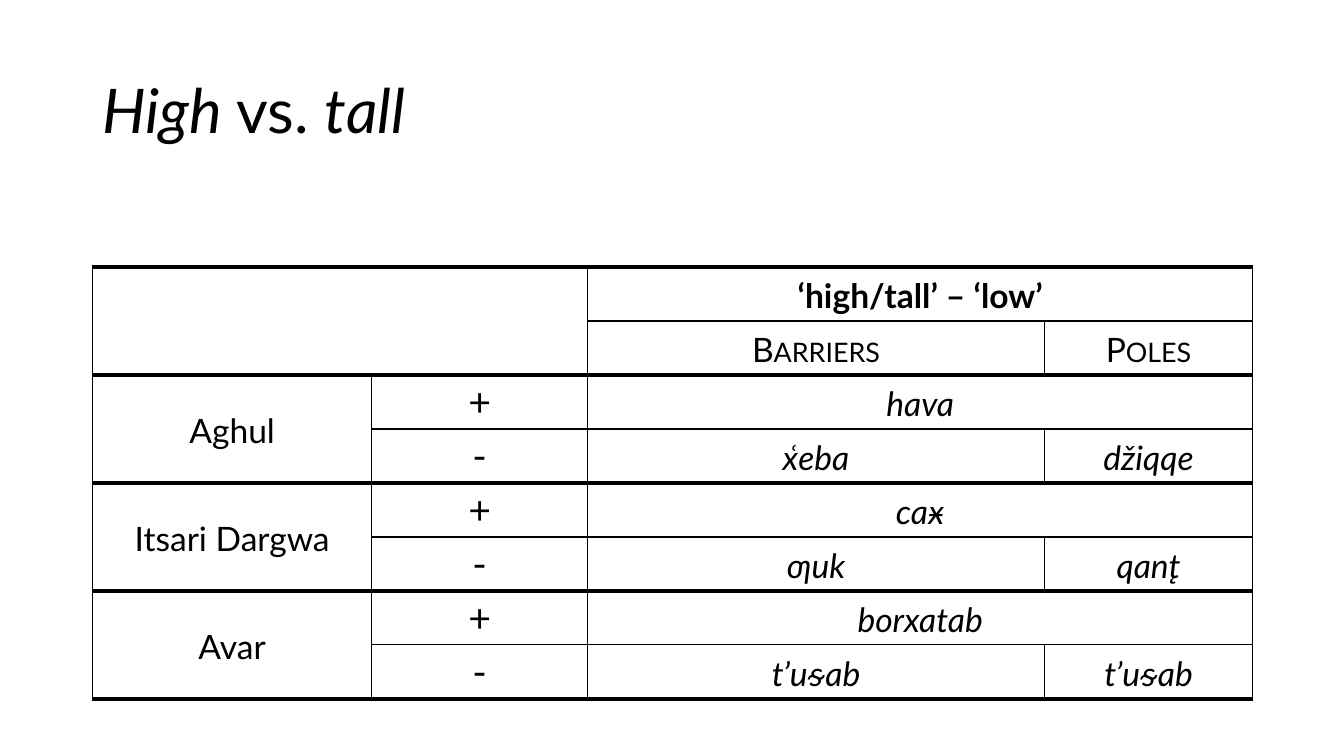
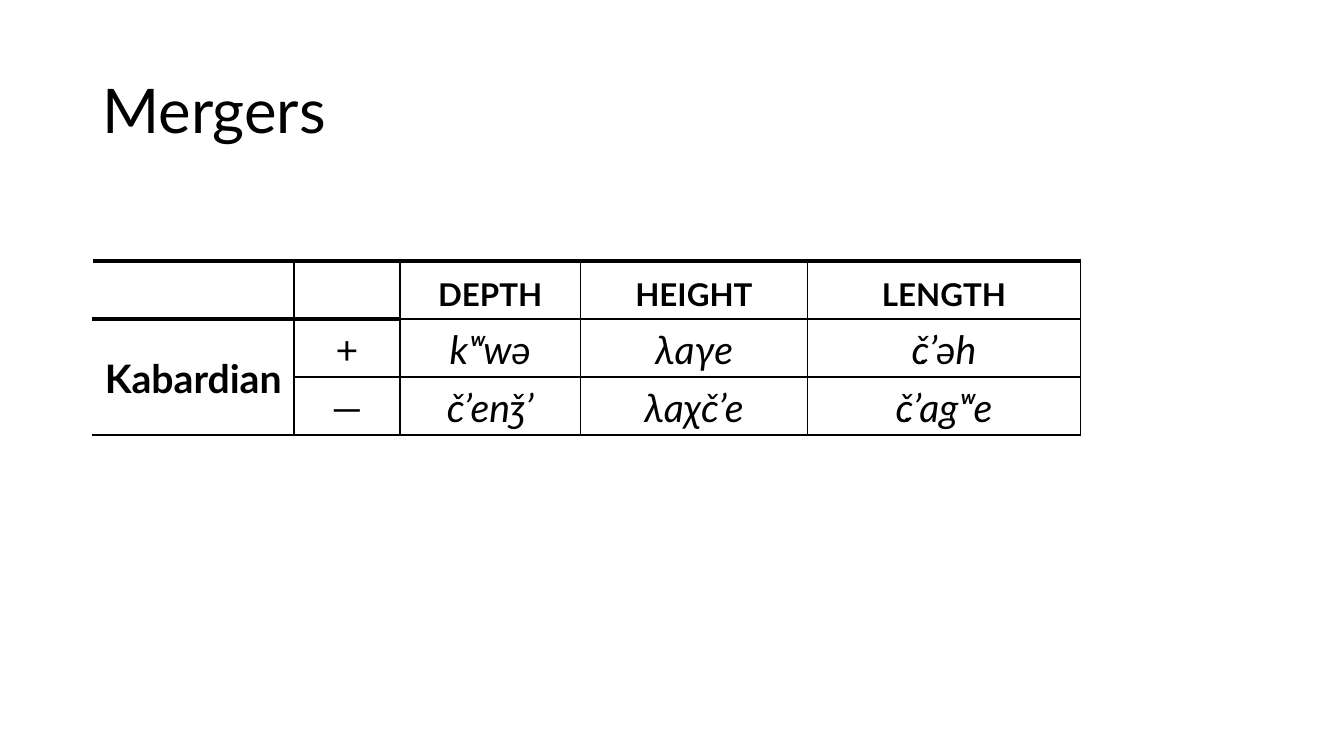
"""Build two slides with tables of dimension adjectives in Caucasian languages."""
from itertools import product

from lxml.etree import SubElement
from pptx import Presentation
from pptx.dml.color import RGBColor
from pptx.enum.text import MSO_ANCHOR as Anchor, PP_ALIGN as Align
from pptx.oxml.ns import qn
from pptx.util import Cm, Pt

COLORS = {"ink": "000000", "paper": "FFFFFF"}
FONT = "Lato"
THIN, THICK = Pt(1), Pt(3)
MARGIN, CONTENT_WIDTH = 2.33, 29.21


class Deck:
    def __init__(self):
        self.presentation = Presentation()
        self.presentation.slide_width = Cm(33.87)
        self.presentation.slide_height = Cm(19.05)
        self.slide = None

    def add_slide(self, *title_runs):
        layout = self.presentation.slide_layouts[6]
        self.slide = self.presentation.slides.add_slide(layout)
        self.title(title_runs)

    def style(self, paragraph, size, bold=False, italic=None, caps=False):
        font = paragraph.font
        font.name, font.size, font.bold, font.italic = FONT, Pt(size), bold, italic
        font.color.rgb = RGBColor.from_string(COLORS["ink"])
        if caps:
            font._element.set("cap", "small")

    def title(self, runs):
        box = self.slide.shapes.add_textbox(
            Cm(MARGIN), Cm(1.01), Cm(CONTENT_WIDTH), Cm(3.68))
        frame = box.text_frame
        frame.word_wrap = True
        frame.vertical_anchor = Anchor.MIDDLE
        paragraph = frame.paragraphs[0]
        paragraph.line_spacing = 0.9
        self.style(paragraph, 44)
        for text, italic in runs:
            run = paragraph.add_run()
            run.text, run.font.italic = text, italic

    def table(self, top, widths, row_height, rows, spans, styles, thick_edges,
              left_edge="ink"):
        frame = self.slide.shapes.add_table(
            len(rows), len(widths), Cm(MARGIN), Cm(top),
            Cm(sum(widths)), Cm(row_height * len(rows)))
        table = frame.table
        table.first_row = table.horz_banding = False
        for column, width in zip(table.columns, widths):
            column.width = Cm(width)
        for row in table.rows:
            row.height = Cm(row_height)
        for start, end in spans:
            table.cell(*start).merge(table.cell(*end))
        for row, column in product(range(len(rows)), range(len(widths))):
            cell = table.cell(row, column)
            if not cell.is_spanned:
                self.borders(table, row, column, thick_edges, left_edge)
                text, kind = rows[row][column]
                if text:
                    self.cell_text(cell, text, **styles[kind])

    def cell_text(self, cell, text, anchor=Anchor.MIDDLE, **font):
        cell.vertical_anchor = anchor
        cell.margin_left = cell.margin_right = Cm(0.18)
        cell.margin_top = cell.margin_bottom = 0
        paragraph = cell.text_frame.paragraphs[0]
        paragraph.text = text
        paragraph.alignment = Align.CENTER
        paragraph.line_spacing = 1.07
        self.style(paragraph, **font)

    def borders(self, table, top, left, thick_edges, left_edge):
        origin = table.cell(top, left)
        bottom = top + origin.span_height
        right = left + origin.span_width
        for row, column in product(range(top, bottom), range(left, right)):
            cell = table.cell(row, column)
            first = cell is origin or (row, column) == (top, left)
            sides = (
                ("a:lnL", column == left, THIN, "ink" if column else left_edge),
                ("a:lnR", first or column + 1 == right, THIN, "ink"),
                ("a:lnT", row == top, THICK if (top, column) in thick_edges else THIN, "ink"),
                ("a:lnB", first or row + 1 == bottom,
                 THICK if (bottom, column) in thick_edges else THIN, "ink"),
            )
            properties = cell._tc.get_or_add_tcPr()
            for tag, drawn, width, color in sides:
                if drawn:
                    line = SubElement(properties, qn(tag), w=str(width))
                    fill = SubElement(line, qn("a:solidFill"))
                    SubElement(fill, qn("a:srgbClr"), val=COLORS[color])
            cell.fill.background()


def high_tall_slide(deck):
    deck.add_slide(("High", True), (" vs. ", False), ("tall", True))
    languages = (
        ("Aghul", "hava", "x̜eba", "džiqqe"),
        ("Itsari Dargwa", "caӿ", "ƣuk", "qant̨"),
        ("Avar", "borxatab", "t’uᵴab", "t’uᵴab"),
    )
    empty = ("", "label")
    rows = [
        (empty, empty, ("‘high/tall’ – ‘low’", "head"), empty),
        (empty, empty, ("Barriers", "caps"), ("Poles", "caps")),
    ]
    spans = [((0, 0), (1, 1)), ((0, 2), (0, 3))]
    for language, high, low_barrier, low_pole in languages:
        row = len(rows)
        spans += [((row, 0), (row + 1, 0)), ((row, 2), (row, 3))]
        rows += [
            ((language, "label"), ("+", "sign"), (high, "form"), empty),
            (empty, ("-", "sign"), (low_barrier, "form"), (low_pole, "form")),
        ]
    styles = {
        "head": dict(size=24, bold=True),
        "caps": dict(size=24, caps=True),
        "label": dict(size=24),
        "sign": dict(size=28, anchor=Anchor.TOP),
        "form": dict(size=24, italic=True),
    }
    thick_edges = set(product(range(0, len(rows) + 1, 2), range(4)))
    deck.table(6.73, (7.04, 5.44, 11.51, 5.25), 1.36, rows, spans, styles, thick_edges)


def mergers_slide(deck):
    deck.add_slide(("Mergers", False))
    empty = ("", "sign")
    signs = (("+", ("kʷwə", "λaγe", "č̣’əh")), ("—", ("č’enǯ’", "λaχč’e", "č̣’agʷe")))
    rows = [(empty, empty, *((name, "caps") for name in ("depth", "height", "length")))]
    for label, (sign, forms) in zip(("Kabardian", ""), signs):
        rows.append(((label, "label"), (sign, "sign"), *((form, "form") for form in forms)))
    styles = {
        "caps": dict(size=28, bold=True, caps=True),
        "label": dict(size=28, bold=True),
        "sign": dict(size=28),
        "form": dict(size=28, italic=True),
    }
    thick_edges = {(0, column) for column in range(5)} | {(1, 0), (1, 1)}
    deck.table(6.58, (5.08, 2.67, 4.55, 5.72, 6.88), 1.46, rows, [((1, 0), (2, 0))],
               styles, thick_edges, left_edge="paper")


def main():
    deck = Deck()
    high_tall_slide(deck)
    mergers_slide(deck)
    deck.presentation.save("out.pptx")


if __name__ == "__main__":
    main()
